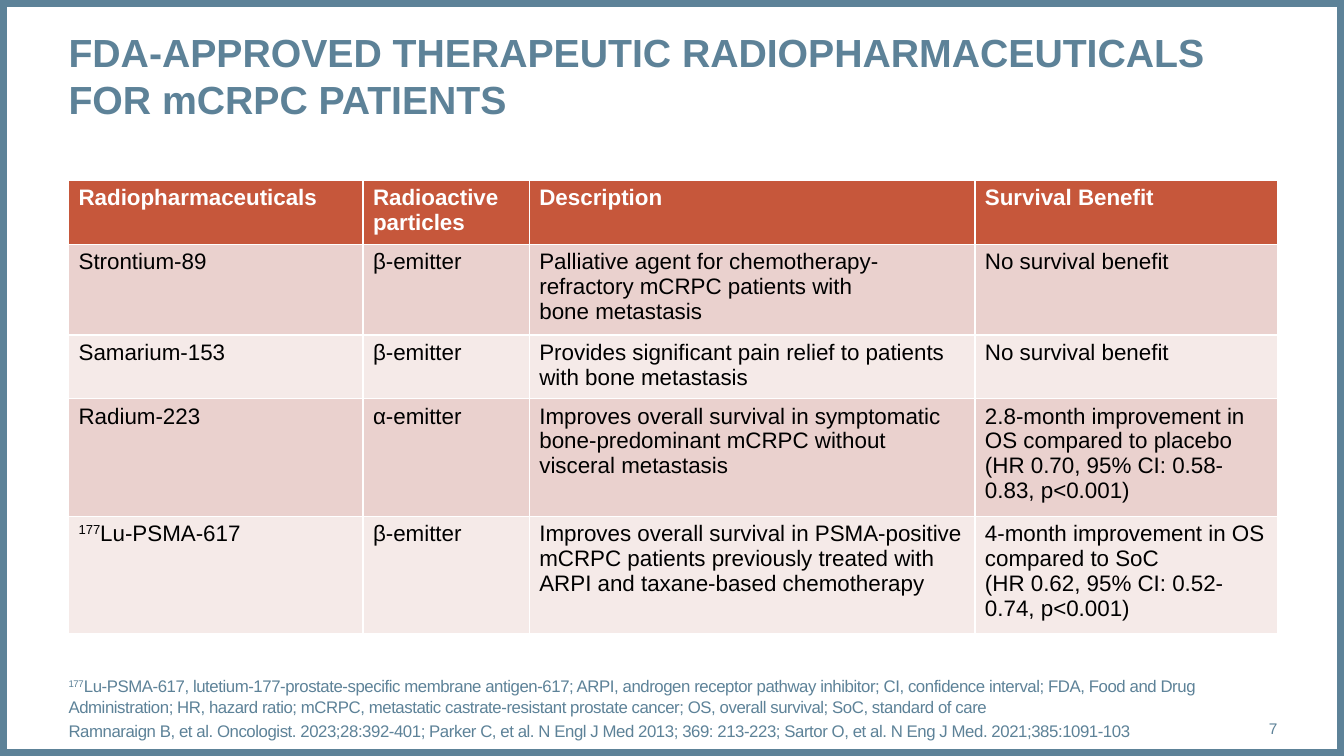
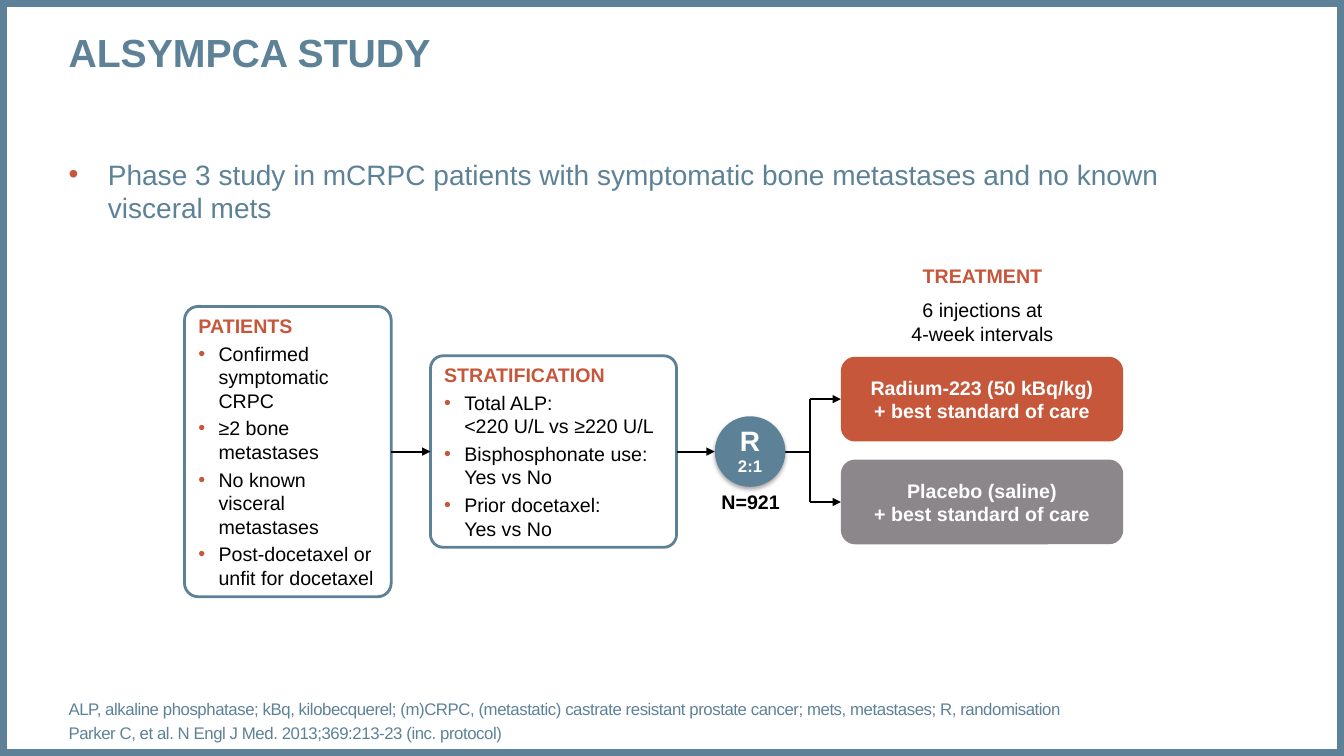
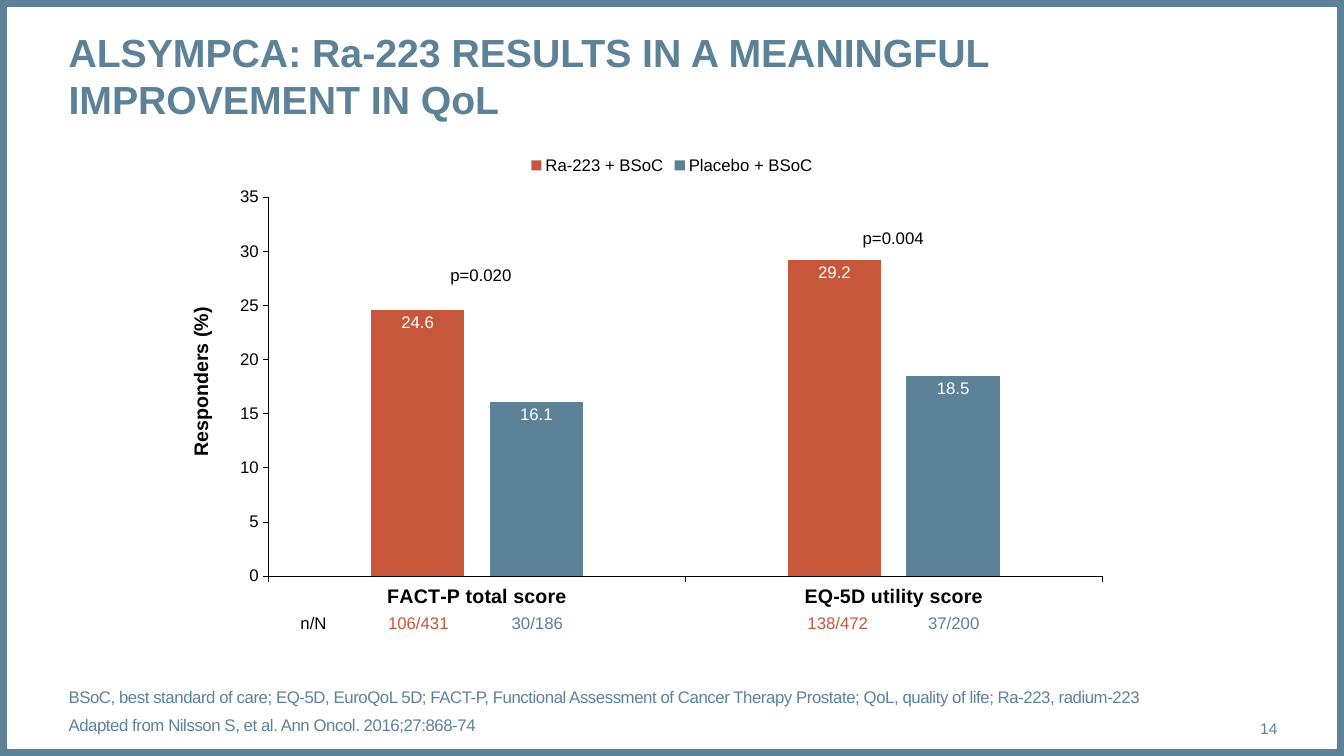
from copy import deepcopy

from lxml.etree import SubElement
from pptx import Presentation
from pptx.chart.data import CategoryChartData
from pptx.dml.color import RGBColor
from pptx.enum.chart import XL_CHART_TYPE as ChartType
from pptx.enum.chart import XL_LABEL_POSITION as LabelPosition
from pptx.enum.chart import XL_LEGEND_POSITION as LegendPosition
from pptx.enum.chart import XL_TICK_MARK as TickMark
from pptx.enum.shapes import MSO_CONNECTOR as Connector
from pptx.enum.shapes import MSO_SHAPE as Shape
from pptx.enum.text import MSO_ANCHOR as Anchor
from pptx.enum.text import PP_ALIGN as Align
from pptx.oxml.ns import qn
from pptx.util import Inches, Pt

FONT = "Arial"
BLUE = "5D8298"
RUST = "C6573B"
GREY = "8B878B"
BLACK = "000000"
WHITE = "FFFFFF"
BANDS = ["EAD1CE", "F5EAE8"]
HARD_SPACE = chr(160)

WIDTH, HEIGHT = 13.33, 7.5
LEFT, CONTENT_WIDTH = 0.68, 11.99
FLOW_Y = 4.48


def rgb(color):
    return RGBColor.from_string(color)


def style_font(font, size, color=BLACK, bold=False, name=FONT):
    font.name = name
    font.size = Pt(size)
    font.bold = bold
    font.color.rgb = rgb(color)


def add_bullet(paragraph, indent):
    properties = paragraph._p.get_or_add_pPr()
    properties.set("marL", str(Inches(indent)))
    properties.set("indent", str(-Inches(indent)))
    bullet_color = SubElement(properties, qn("a:buClr"))
    SubElement(bullet_color, qn("a:srgbClr"), val=RUST)
    SubElement(properties, qn("a:buFont"), typeface=FONT)
    SubElement(properties, qn("a:buChar"), char="•")


def add_text(frame, text, size=14, color=BLACK, bold=False, align=Align.LEFT,
             before=0, after=0, line_spacing=1.0, bullet_indent=0, tracking=0):
    paragraph = frame.paragraphs[0]
    if paragraph.runs:
        paragraph = frame.add_paragraph()
    paragraph.alignment = align
    paragraph.line_spacing = line_spacing
    paragraph.space_before = Pt(before)
    paragraph.space_after = Pt(after)
    if bullet_indent:
        add_bullet(paragraph, bullet_indent)
    for line_index, line in enumerate(text.split("\n")):
        if line_index:
            paragraph.add_line_break()
            paragraph._p[-1].append(deepcopy(run._r.rPr))
        for part_index, part in enumerate(line.split("^")):
            if not part:
                continue
            run = paragraph.add_run()
            run.text = part
            style_font(run.font, size, color, bold)
            properties = run._r.get_or_add_rPr()
            if tracking:
                properties.set("spc", str(round(tracking * 100)))
            if part_index % 2:
                properties.set("baseline", "30000")


def set_frame(frame, anchor=Anchor.TOP, margin_x=0, margin_y=0, wrap=True):
    frame.word_wrap = wrap
    frame.vertical_anchor = anchor
    frame.margin_left = frame.margin_right = Inches(margin_x)
    frame.margin_top = frame.margin_bottom = Inches(margin_y)


def add_box(slide, x, y, w, h, **frame_format):
    box = slide.shapes.add_textbox(Inches(x), Inches(y), Inches(w), Inches(h))
    set_frame(box.text_frame, **frame_format)
    return box


def add_panel(slide, preset, x, y, w, h, fill=None, line=None, line_width=2,
              corner=None, **frame_format):
    panel = slide.shapes.add_shape(preset, Inches(x), Inches(y), Inches(w), Inches(h))
    panel.shadow.inherit = False
    if fill:
        panel.fill.solid()
        panel.fill.fore_color.rgb = rgb(fill)
    else:
        panel.fill.background()
    if line:
        panel.line.color.rgb = rgb(line)
        panel.line.width = Pt(line_width)
    else:
        panel.line.fill.background()
    if corner:
        panel.adjustments[0] = corner
    set_frame(panel.text_frame, **frame_format)
    return panel


def add_line(slide, start, end, source=None, target=None, arrow=True):
    line = slide.shapes.add_connector(
        Connector.STRAIGHT, *(Inches(value) for value in (*start, *end)))
    line.line.color.rgb = rgb(BLACK)
    line.line.width = Pt(1.5)
    if source:
        line.begin_connect(source, 3)
    if target:
        line.end_connect(target, 1)
    if arrow:
        SubElement(line.line._get_or_add_ln(), qn("a:tailEnd"), type="triangle")
    SubElement(line._element.spPr, qn("a:effectLst"))


def add_slide(deck, title, number=None):
    slide = deck.slides.add_slide(deck.slide_layouts[6])
    add_panel(slide, Shape.RECTANGLE, 0, 0, WIDTH, HEIGHT, line=BLUE, line_width=10)
    heading = add_box(slide, LEFT, 0.28, CONTENT_WIDTH, 0.94)
    add_text(heading.text_frame, title, size=28, color=BLUE, bold=True)
    if number:
        page = add_box(slide, 11.81, 7.03, 0.86, 0.4, anchor=Anchor.MIDDLE)
        add_text(page.text_frame, str(number), size=11, color=BLUE, align=Align.RIGHT)
    return slide


def add_footnotes(slide, notes, y=6.95, w=11.5, anchor=Anchor.MIDDLE, **spacing):
    footer = add_box(slide, LEFT, y, w, 0.4, anchor=anchor)
    for note in notes:
        add_text(footer.text_frame, note, size=12, color=BLUE, tracking=-0.3, **spacing)


def add_grid(slide, x, y, widths, height, row_height, rows):
    holder = slide.shapes.add_table(len(rows), len(widths), Inches(x), Inches(y),
                                    Inches(sum(widths)), Inches(height))
    grid = holder.table
    grid.horz_banding = False
    for column, width in zip(grid.columns, widths):
        column.width = Inches(width)
    for index, (row, texts) in enumerate(zip(grid.rows, rows)):
        row.height = Inches(row_height)
        header = index == 0
        for cell, text in zip(row.cells, texts):
            cell.fill.solid()
            cell.fill.fore_color.rgb = rgb(RUST if header else BANDS[(index - 1) % 2])
            for line in text.split("\n"):
                add_text(cell.text_frame, line, size=16, bold=header,
                         color=WHITE if header else BLACK)
    holder.height = Inches(height)


def add_criteria(slide, x, w, h, heading, criteria):
    panel = add_panel(slide, Shape.ROUNDED_RECTANGLE, x, FLOW_Y - h / 2, w, h,
                      fill=WHITE, line=BLUE, corner=0.066, anchor=Anchor.MIDDLE,
                      margin_x=0.1, margin_y=0.05)
    add_text(panel.text_frame, heading, color=RUST, bold=True, after=3)
    for criterion in criteria:
        add_text(panel.text_frame, criterion, after=3, bullet_indent=0.2)
    return panel


def add_soft_shadow(panel):
    effects = panel._element.spPr.find(qn("a:effectLst"))
    shadow = SubElement(effects, qn("a:outerShdw"), blurRad="40000", dist="23000",
                        dir="5400000", rotWithShape="0")
    color = SubElement(shadow, qn("a:srgbClr"), val=BLACK)
    SubElement(color, qn("a:alpha"), val="35000")


def place_plot(chart, **place):
    plot_area = chart._chartSpace.chart.plotArea
    for automatic in plot_area.findall(qn("c:layout")):
        plot_area.remove(automatic)
    layout = SubElement(plot_area, qn("c:layout"))
    plot_area.insert(0, layout)
    manual = SubElement(layout, qn("c:manualLayout"))
    settings = {"layoutTarget": "inner", "xMode": "edge", "yMode": "edge", **place}
    for tag, value in settings.items():
        SubElement(manual, qn(f"c:{tag}"), val=str(value))


def style_axis(axis, size, bold=False):
    axis.has_major_gridlines = False
    axis.major_tick_mark = TickMark.OUTSIDE
    axis.minor_tick_mark = TickMark.NONE
    axis.format.line.color.rgb = rgb(BLACK)
    axis.format.line.width = Pt(0.75)
    style_font(axis.tick_labels.font, size, bold=bold)


def add_columns(slide, x, y, w, h, categories, series):
    data = CategoryChartData()
    data.categories = categories
    for name, values, _ in series:
        data.add_series(name, values)
    chart = slide.shapes.add_chart(ChartType.COLUMN_CLUSTERED, Inches(x), Inches(y),
                                   Inches(w), Inches(h), data).chart
    style_font(chart.font, 10, name="Calibri")
    chart.has_title = False
    chart.has_legend = True
    chart.legend.position = LegendPosition.TOP
    chart.legend.include_in_layout = False
    style_font(chart.legend.font, 12)
    style_axis(chart.category_axis, 14, bold=True)
    style_axis(chart.value_axis, 12)
    chart.value_axis.minimum_scale = 0
    chart.value_axis.maximum_scale = 35
    chart.value_axis.major_unit = 5
    plot = chart.plots[0]
    plot.gap_width = 219
    plot.overlap = -27
    plot.vary_by_categories = False
    for columns, (_, _, color) in zip(plot.series, series):
        columns.format.fill.solid()
        columns.format.fill.fore_color.rgb = rgb(color)
        labels = columns.data_labels
        labels.show_value = True
        labels.position = LabelPosition.INSIDE_END
        style_font(labels.font, 12, WHITE)
    place_plot(chart, x=0.05, y=0.11, w=0.93, h=0.8)


def add_label(slide, center, y, text, w=0.8, h=0.2, rotation=0, size=12, **text_format):
    label = add_box(slide, center - w / 2, y, w, h, wrap=False)
    label.rotation = rotation
    add_text(label.text_frame, text, size=size, align=Align.CENTER, **text_format)


def build_approvals(deck):
    slide = add_slide(
        deck, "FDA-APPROVED THERAPEUTIC RADIOPHARMACEUTICALS FOR mCRPC PATIENTS", 7)
    add_grid(slide, LEFT, 1.79, [2.92, 1.65, 4.42, 3], 4.5, 0.41, [
        ["Radiopharmaceuticals", "Radioactive particles", "Description",
         "Survival Benefit"],
        ["Strontium-89", "β-emitter",
         "Palliative agent for chemotherapy-refractory mCRPC patients with "
         f"bone{HARD_SPACE}metastasis",
         "No survival benefit"],
        ["Samarium-153", "β-emitter",
         "Provides significant pain relief to patients with bone metastasis",
         "No survival benefit"],
        ["Radium-223", "α-emitter",
         "Improves overall survival in symptomatic bone-predominant mCRPC "
         "without visceral metastasis",
         "2.8-month improvement in OS compared to placebo "
         f"(HR 0.70, 95%{HARD_SPACE}CI: 0.58-0.83, p<0.001)"],
        ["^177^Lu-PSMA-617", "β-emitter",
         "Improves overall survival in PSMA-positive mCRPC patients previously "
         "treated with ARPI and taxane-based chemotherapy",
         "4-month improvement in OS compared to SoC\n"
         "(HR 0.62, 95% CI: 0.52-0.74, p<0.001)"],
    ])
    add_footnotes(slide, [
        "^177^Lu-PSMA-617, lutetium-177-prostate-specific membrane antigen-617; "
        "ARPI, androgen receptor pathway inhibitor; CI, confidence interval; "
        "FDA, Food and Drug Administration; HR, hazard ratio; mCRPC, metastatic "
        "castrate-resistant prostate cancer; OS, overall survival; "
        "SoC, standard of care",
        "Ramnaraign B, et al. Oncologist. 2023;28:392-401; Parker C, et al. "
        "N Engl J Med 2013; 369: 213-223; Sartor O, et al. N Eng J Med. "
        "2021;385:1091-103",
    ], anchor=Anchor.BOTTOM, before=3)


def build_study_design(deck):
    slide = add_slide(deck, "ALSYMPCA STUDY")
    summary = add_box(slide, LEFT, 1.56, CONTENT_WIDTH, 0.69)
    add_text(summary.text_frame,
             "Phase 3 study in mCRPC patients with symptomatic bone metastases "
             "and no known \nvisceral mets",
             size=20, color=BLUE, before=12, bullet_indent=0.39)

    patients = add_criteria(slide, 1.83, 2.05, 2.88, "PATIENTS", [
        "Confirmed symptomatic CRPC", "≥2 bone metastases",
        "No known visceral metastases", "Post-docetaxel or unfit for docetaxel"])
    stratification = add_criteria(slide, 4.27, 2.44, 1.9, "STRATIFICATION", [
        "Total ALP:\n<220 U/L vs ≥220 U/L", "Bisphosphonate use:\nYes vs No",
        "Prior docetaxel:\nYes vs No"])

    circle_x, diameter, fork_x, arm_x = 7.09, 0.7, 8.03, 8.34
    add_line(slide, (3.88, FLOW_Y), (4.27, FLOW_Y), patients, stratification)
    add_line(slide, (6.71, FLOW_Y), (circle_x, FLOW_Y), source=stratification)
    add_line(slide, (circle_x + diameter, FLOW_Y), (fork_x, FLOW_Y), arrow=False)
    randomisation = add_panel(slide, Shape.OVAL, circle_x, FLOW_Y - diameter / 2,
                              diameter, diameter, fill=BLUE, anchor=Anchor.MIDDLE)
    add_soft_shadow(randomisation)
    for text, size in [("R", 20), ("2:1", 12)]:
        add_text(randomisation.text_frame, text, size=size, color=WHITE, bold=True,
                 align=Align.CENTER, line_spacing=0.9)
    enrolled = add_box(slide, 7.05, 4.86, 0.79, 0.24, anchor=Anchor.MIDDLE)
    add_text(enrolled.text_frame, "N=921", bold=True, align=Align.CENTER)

    treatment = add_box(slide, 8.76, 2.61, 1.97, 0.82, anchor=Anchor.MIDDLE)
    add_text(treatment.text_frame, "TREATMENT", color=RUST, bold=True,
             align=Align.CENTER)
    add_text(treatment.text_frame, "6 injections at\n4-week intervals",
             align=Align.CENTER, before=8)

    arm_height = 0.84
    arm_centers = [3.96, 4.98]
    add_line(slide, (fork_x, arm_centers[0]), (fork_x, arm_centers[1]), arrow=False)
    for center, therapy, color in zip(
            arm_centers, ["Radium-223 (50 kBq/kg)", "Placebo (saline)"], [RUST, GREY]):
        arm = add_panel(slide, Shape.ROUNDED_RECTANGLE, arm_x, center - arm_height / 2,
                        2.8, arm_height, fill=color, corner=0.167,
                        anchor=Anchor.MIDDLE, margin_x=0.04, margin_y=0.04)
        add_text(arm.text_frame, f"{therapy}\n+ best standard of care", color=WHITE,
                 bold=True, align=Align.CENTER)
        add_line(slide, (fork_x, center), (arm_x, center), target=arm)

    add_footnotes(slide, [
        "ALP, alkaline phosphatase; kBq, kilobecquerel; (m)CRPC, (metastatic) "
        "castrate resistant prostate cancer; mets, metastases; R, randomisation",
        "Parker C, et al. N Engl J Med. 2013;369:213-23 (inc. protocol)",
    ], w=11.13, before=3)


def build_quality_of_life(deck):
    slide = add_slide(
        deck, "ALSYMPCA: Ra-223 RESULTS IN A MEANINGFUL IMPROVEMENT IN QoL", 14)
    add_columns(slide, 2.22, 1.44, 8.89, 4.7,
                ["FACT-P total score", "EQ-5D utility score"],
                [("Ra-223 + BSoC", [24.6, 29.2], RUST),
                 ("Placebo + BSoC", [16.1, 18.5], BLUE)])
    add_label(slide, 1.99, 3.67, "Responders (%)", w=1.6, h=0.24, rotation=270,
              size=14, bold=True)
    for center, y, p_value in [(4.77, 2.63, "p=0.020"), (8.86, 2.26, "p=0.004")]:
        add_label(slide, center, y, p_value)
    for center, count, color in [
            (3.11, "n/N", BLACK), (4.15, "106/431", RUST), (5.33, "30/186", BLUE),
            (8.31, "138/472", RUST), (9.46, "37/200", BLUE)]:
        add_label(slide, center, 6.08, count, color=color)
    add_footnotes(slide, [
        "BSoC, best standard of care; EQ-5D, EuroQoL 5D; FACT-P, Functional "
        "Assessment of Cancer Therapy Prostate; QoL, quality of life; "
        "Ra-223, radium-223",
        "Adapted from Nilsson S, et al. Ann Oncol. 2016;27:868-74",
    ], y=6.85, w=11.26, after=6)


def main():
    deck = Presentation()
    deck.slide_width = Inches(WIDTH)
    deck.slide_height = Inches(HEIGHT)
    build_approvals(deck)
    build_study_design(deck)
    build_quality_of_life(deck)
    deck.save("out.pptx")


if __name__ == "__main__":
    main()
